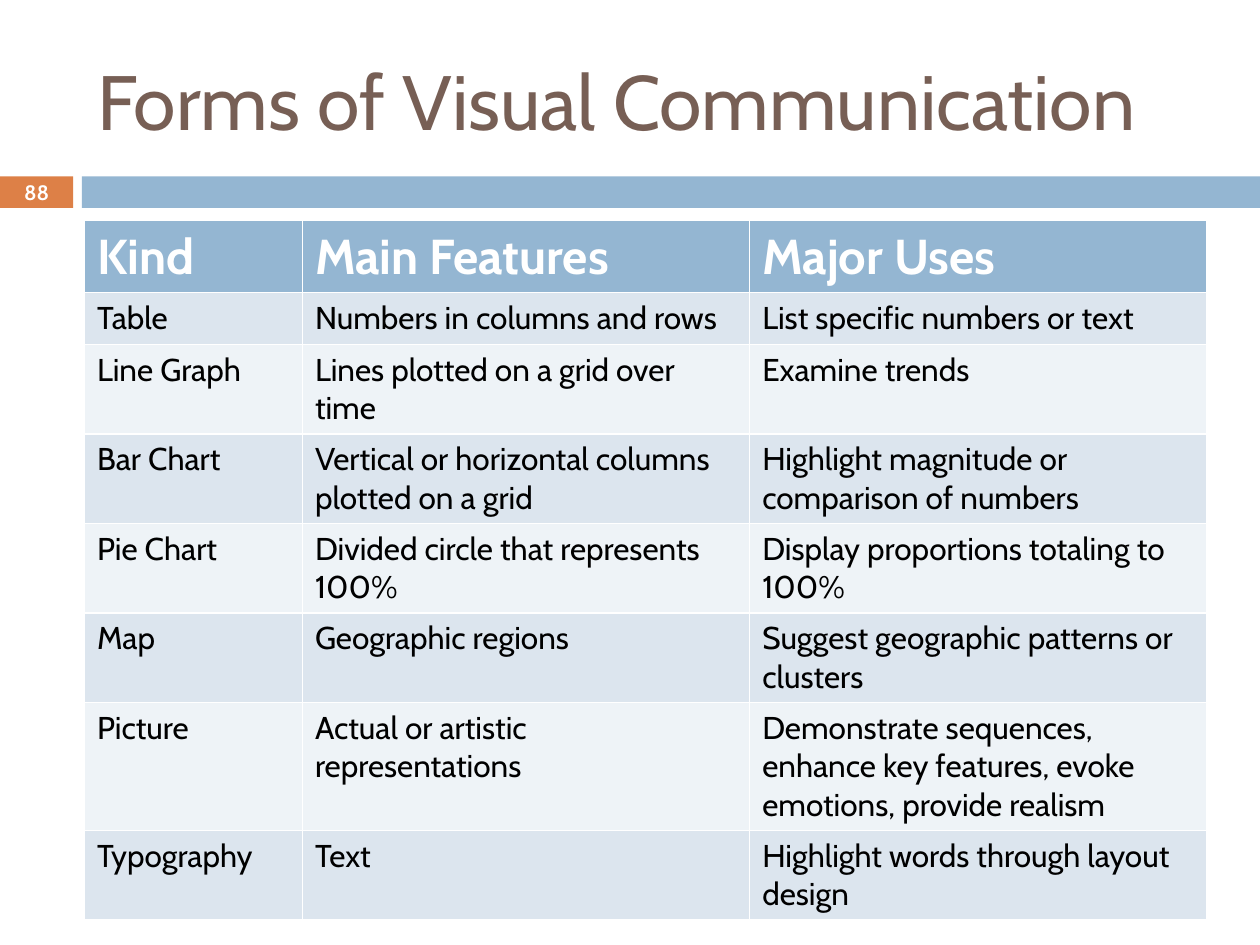
from pptx import Presentation, util as u
from pptx.dml.color import RGBColor
from pptx.enum import shapes, text

# Content
TITLE = "Forms of Visual Communication"
PAGE = "88"
ROWS = [
    ("Kind", "Main Features", "Major Uses"),
    ("Table", "Numbers in columns and rows", "List specific numbers or text"),
    ("Line Graph", "Lines plotted on a grid over time", "Examine trends"),
    ("Bar Chart", "Vertical or horizontal columns plotted on a grid",
     "Highlight magnitude or comparison of numbers"),
    ("Pie Chart", "Divided circle that represents 100%",
     "Display proportions totaling to 100%"),
    ("Map", "Geographic regions", "Suggest geographic patterns or clusters"),
    ("Picture", "Actual or artistic representations",
     "Demonstrate sequences, enhance key features, evoke emotions, "
     "provide realism"),
    ("Typography", "Text", "Highlight words through layout design"),
]
WIDTHS = (1.73, 3.55, 3.63)
HIGH = 0.41
LEFT, WIDE = 0.67, 8.92
FONT = "Cabin"
COLORS = {"title": "775F55", "blue": "94B6D2", "orange": "DD8047",
          "odd": "DCE5EE", "even": "EEF3F7", "white": "FFFFFF",
          "black": "000000"}


def rgb(name):
    return RGBColor.from_string(COLORS[name])


def style(par, size, color, bold=False):
    font = par.font
    font.name, font.size, font.bold = FONT, u.Pt(size), bold
    font.color.rgb = rgb(color)


def box(x, y, w, h):
    return [u.Inches(n) for n in (x, y, w, h)]


def fill(part, color):
    part.fill.solid()
    part.fill.fore_color.rgb = rgb(color)


deck = Presentation()
deck.slide_width, deck.slide_height = u.Inches(10), u.Inches(7.5)
slide = deck.slides.add_slide(deck.slide_layouts[5])

# Band under the title
for x, w, color in ((0, 0.58, "orange"), (0.65, 9.35, "blue")):
    bar = slide.shapes.add_shape(shapes.MSO_SHAPE.RECTANGLE,
                                 *box(x, 1.4, w, 0.25))
    bar.shadow.inherit = False
    bar.line.fill.background()
    fill(bar, color)

# Title
title = slide.shapes.title
title.left, title.top, title.width, title.height = box(LEFT, 0.25, WIDE, 1.08)
title.text_frame.text = TITLE
title.text_frame.vertical_anchor = text.MSO_ANCHOR.MIDDLE
head = title.text_frame.paragraphs[0]
head.alignment = text.PP_ALIGN.LEFT
style(head, 44, "title")

# Table: the default style draws the white rules
table = slide.shapes.add_table(
    len(ROWS), len(WIDTHS), *box(LEFT, 1.75, WIDE, HIGH * len(ROWS))).table
for col, w in zip(table.columns, WIDTHS):
    col.width = u.Inches(w)
for r, row in enumerate(ROWS):
    table.rows[r].height = u.Inches(HIGH)
    for c, words in enumerate(row):
        cell = table.cell(r, c)
        cell.text = words
        par = cell.text_frame.paragraphs[0]
        if r == 0:
            fill(cell, "blue")
            style(par, 28, "white", True)
        else:
            fill(cell, "odd" if r % 2 else "even")
            style(par, 18, "black")

# Page number
frame = slide.shapes.add_textbox(*box(0, 1.39, 0.58, 0.27)).text_frame
frame.word_wrap = True
frame.margin_top = frame.margin_bottom = 0
frame.vertical_anchor = text.MSO_ANCHOR.MIDDLE
frame.text = PAGE
page = frame.paragraphs[0]
page.alignment = text.PP_ALIGN.CENTER
style(page, 11.9, "white", True)

deck.save("out.pptx")
